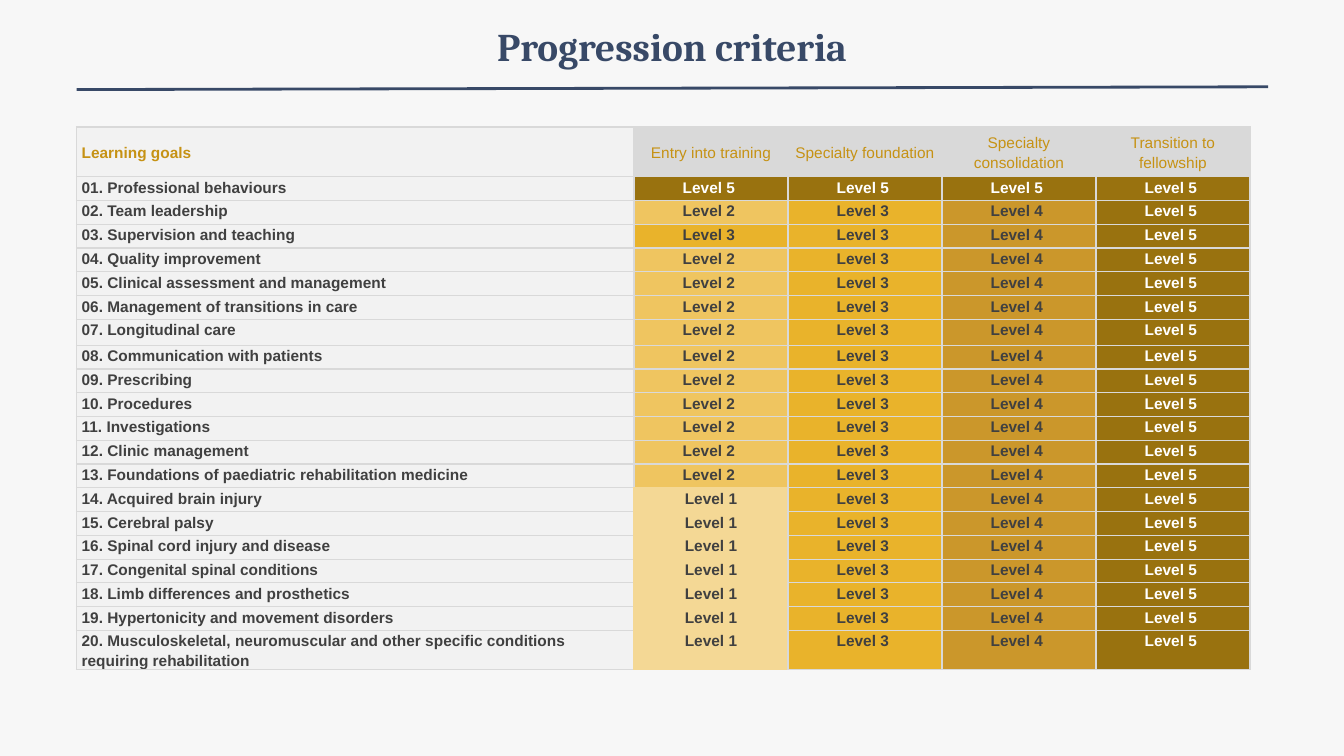
"""Build the progression criteria slide: a title, a rule and a table of levels."""
from lxml.etree import SubElement as Sub
from pptx import Presentation
from pptx.dml.color import RGBColor as Rgb
from pptx.enum.shapes import MSO_CONNECTOR as Link
from pptx.enum.text import MSO_ANCHOR as Anchor, MSO_AUTO_SIZE as Auto, PP_ALIGN as Align
from pptx.oxml.ns import qn
from pptx.util import Pt

TITLE = "Progression criteria"
HEADS = ["Learning goals", "Entry into training", "Specialty foundation",
         "Specialty consolidation", "Transition to fellowship"]
GOALS = [
    ("Professional behaviours", 5, 5, 5, 5),
    ("Team leadership", 2, 3, 4, 5),
    ("Supervision and teaching", 3, 3, 4, 5),
    ("Quality improvement", 2, 3, 4, 5),
    ("Clinical assessment and management", 2, 3, 4, 5),
    ("Management of transitions in care", 2, 3, 4, 5),
    ("Longitudinal care", 2, 3, 4, 5),
    ("Communication with patients", 2, 3, 4, 5),
    ("Prescribing", 2, 3, 4, 5),
    ("Procedures", 2, 3, 4, 5),
    ("Investigations", 2, 3, 4, 5),
    ("Clinic management", 2, 3, 4, 5),
    ("Foundations of paediatric rehabilitation medicine", 2, 3, 4, 5),
    ("Acquired brain injury", 1, 3, 4, 5),
    ("Cerebral palsy", 1, 3, 4, 5),
    ("Spinal cord injury and disease", 1, 3, 4, 5),
    ("Congenital spinal conditions", 1, 3, 4, 5),
    ("Limb differences and prosthetics", 1, 3, 4, 5),
    ("Hypertonicity and movement disorders", 1, 3, 4, 5),
    ("Musculoskeletal, neuromuscular and other specific conditions "
     "requiring rehabilitation", 1, 3, 4, 5),
]
FILLS = {1: "F4D895", 2: "EFC560", 3: "E9B32B", 4: "CB972B", 5: "99720F"}
NAVY, GOLD, DARK, WHITE = "384967", "C69214", "404040", "FFFFFF"
PALE, GREY, BACK = "F2F2F2", "D9D9D9", "F7F7F7"
LEFT, TOP = 54.72, 90.72
COLS = [398.2] + [110] * 4
ROWS = [35.5] + [17] * 6 + [18.5] + [17] * 12 + [28]


def tint(text):
    return Rgb.from_string(text)


def write(para, text, face, size, color, bold=True):
    run = para.add_run()
    run.text = text
    font = run.font
    font.name, font.size, font.bold = face, Pt(size), bold
    font.color.rgb = tint(color)


def edge(cell, color):
    props = cell._tc.get_or_add_tcPr()
    for side in ("lnL", "lnR", "lnT", "lnB"):
        line = Sub(props, qn("a:" + side), w=str(Pt(1)))
        Sub(Sub(line, qn("a:solidFill")), qn("a:srgbClr"), val=color)


def fill(cell, text, back, color, bold, rim, mid, head):
    edge(cell, rim)
    cell.fill.solid()
    cell.fill.fore_color.rgb = tint(back)
    cell.margin_left = cell.margin_right = Pt(3.6)
    cell.margin_top = cell.margin_bottom = 0
    cell.vertical_anchor = Anchor.MIDDLE if head else Anchor.TOP
    para = cell.text_frame.paragraphs[0]
    para.alignment = Align.CENTER if mid else Align.LEFT
    para.line_spacing = 1.15
    write(para, text, "Arial", 11, color, bold)


def head(slide):
    box = slide.shapes.title
    box.left, box.top, box.width, box.height = Pt(156), Pt(12.24), Pt(648), Pt(90)
    frame = box.text_frame
    frame.word_wrap, frame.auto_size = True, Auto.NONE
    frame.vertical_anchor = Anchor.TOP
    para = frame.paragraphs[0]
    para.alignment = Align.CENTER
    write(para, TITLE, "Cambria", 28, NAVY)
    rule = slide.shapes.add_connector(
        Link.STRAIGHT, Pt(LEFT), Pt(64), Pt(905.76), Pt(62))
    rule.line.color.rgb, rule.line.width = tint(NAVY), Pt(2)
    Sub(rule._element.spPr, qn("a:effectLst"))


def grid(slide):
    table = slide.shapes.add_table(
        len(ROWS), len(COLS), Pt(LEFT), Pt(TOP), Pt(sum(COLS)), Pt(sum(ROWS))).table
    table.first_row = table.horz_banding = False
    for col, width in zip(table.columns, COLS):
        col.width = Pt(width)
    for row, height in zip(table.rows, ROWS):
        row.height = Pt(height)
    for c, text in enumerate(HEADS):
        fill(table.cell(0, c), text, GREY if c else PALE, GOLD, c == 0, GREY, c > 0, True)
    for r, (goal, *levels) in enumerate(GOALS, 1):
        fill(table.cell(r, 0), f"{r:02}. {goal}", PALE, DARK, True, GREY, False, False)
        for c, level in enumerate(levels, 1):
            text = f"Level {level}" + (" " if level > 1 else "")
            rim = FILLS[1] if level == 1 else GREY
            fill(table.cell(r, c), text, FILLS[level],
                 WHITE if level == 5 else DARK, True, rim, True, False)


def main():
    deck = Presentation()
    deck.slide_width, deck.slide_height = Pt(960), Pt(540)
    slide = deck.slides.add_slide(deck.slide_layouts[5])
    slide.background.fill.solid()
    slide.background.fill.fore_color.rgb = tint(BACK)
    head(slide)
    grid(slide)
    deck.save("out.pptx")


if __name__ == "__main__":
    main()
